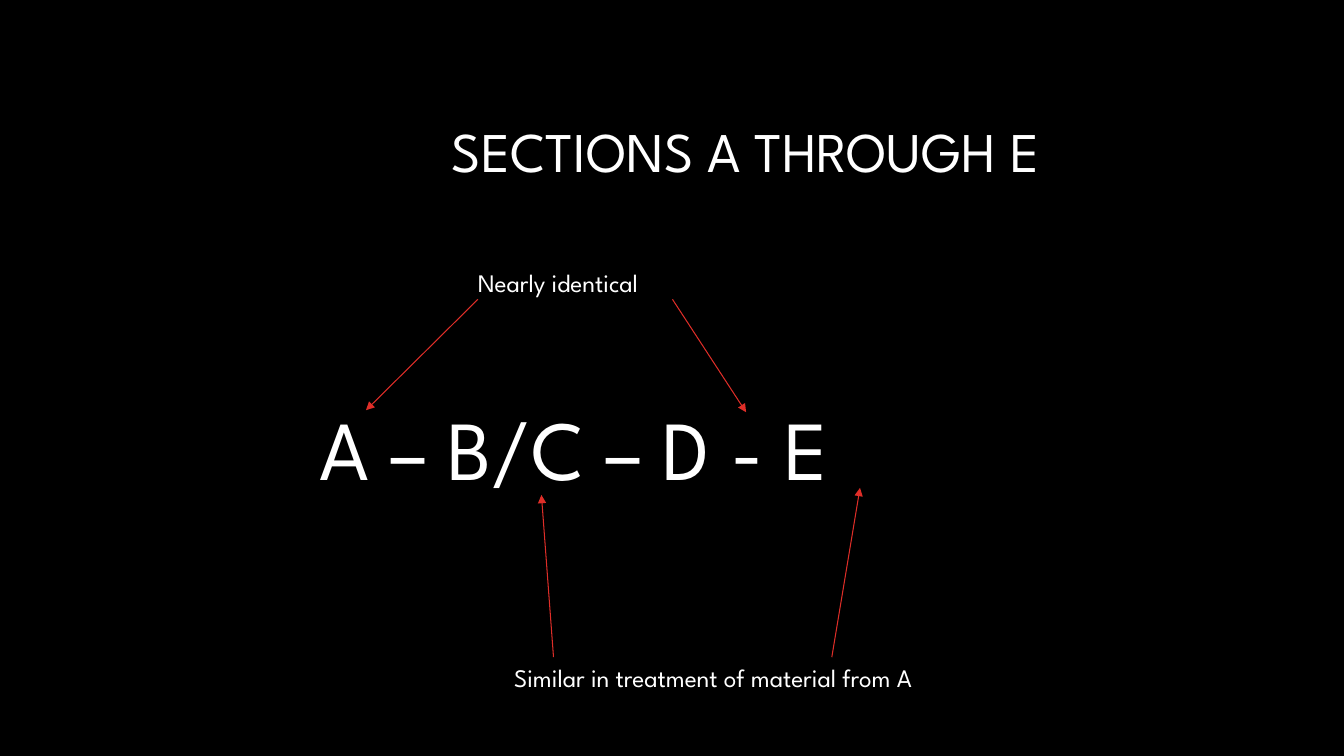
from dataclasses import dataclass

from lxml.etree import SubElement
from pptx import Presentation
from pptx.dml.color import RGBColor
from pptx.enum.shapes import MSO_CONNECTOR
from pptx.enum.text import MSO_ANCHOR, MSO_AUTO_SIZE, PP_ALIGN
from pptx.oxml.ns import qn
from pptx.util import Inches, Pt


@dataclass(frozen=True)
class Theme:
    font: str = "League Spartan"
    background: RGBColor = RGBColor(0, 0, 0)
    text: RGBColor = RGBColor(255, 255, 255)
    arrow: RGBColor = RGBColor(0xDF, 0x2E, 0x28)
    title_size: int = 40
    form_size: int = 60
    label_size: int = 18
    arrow_width: float = 0.75


theme = Theme()


def write(tf, text, size):
    tf.text = text
    font = tf.paragraphs[0].runs[0].font
    font.name = theme.font
    font.size = Pt(size)
    font.color.rgb = theme.text


prs = Presentation()
prs.slide_width = Inches(13.33)
prs.slide_height = Inches(7.5)
slide = prs.slides.add_slide(prs.slide_layouts[5])
slide.background.fill.solid()
slide.background.fill.fore_color.rgb = theme.background

title = slide.shapes.title
title.left, title.top = Inches(0.99), Inches(0.83)
title.width, title.height = Inches(9.42), Inches(1.41)
tf = title.text_frame
write(tf, "SECTIONS A THROUGH E", theme.title_size)
tf.vertical_anchor = MSO_ANCHOR.MIDDLE
tf.paragraphs[0].alignment = PP_ALIGN.RIGHT
tf.paragraphs[0].line_spacing = 0.9

labels = [
    ("A – B/C – D - E", theme.form_size, 3.07, 3.88, 5.96, 1.11),
    ("Nearly identical", theme.label_size, 4.64, 2.6, 2.12, 0.4),
    ("Similar in treatment of material from A", theme.label_size, 5, 6.52, 4.81, 0.4),
]
for text, size, *box in labels:
    tf = slide.shapes.add_textbox(*map(Inches, box)).text_frame
    tf.word_wrap = False
    tf.auto_size = MSO_AUTO_SIZE.SHAPE_TO_FIT_TEXT
    write(tf, text, size)

arrows = [
    (6.67, 2.97, 7.4, 4.09),
    (4.74, 2.97, 3.63, 4.07),
    (5.49, 6.52, 5.37, 4.91),
    (8.25, 6.52, 8.53, 4.84),
]
for ends in arrows:
    arrow = slide.shapes.add_connector(MSO_CONNECTOR.STRAIGHT, *map(Inches, ends))
    arrow.line.color.rgb = theme.arrow
    arrow.line.width = Pt(theme.arrow_width)
    SubElement(arrow.line._get_or_add_ln(), qn("a:tailEnd"), type="triangle")
    SubElement(arrow._element.spPr, qn("a:effectLst"))

prs.save("out.pptx")
